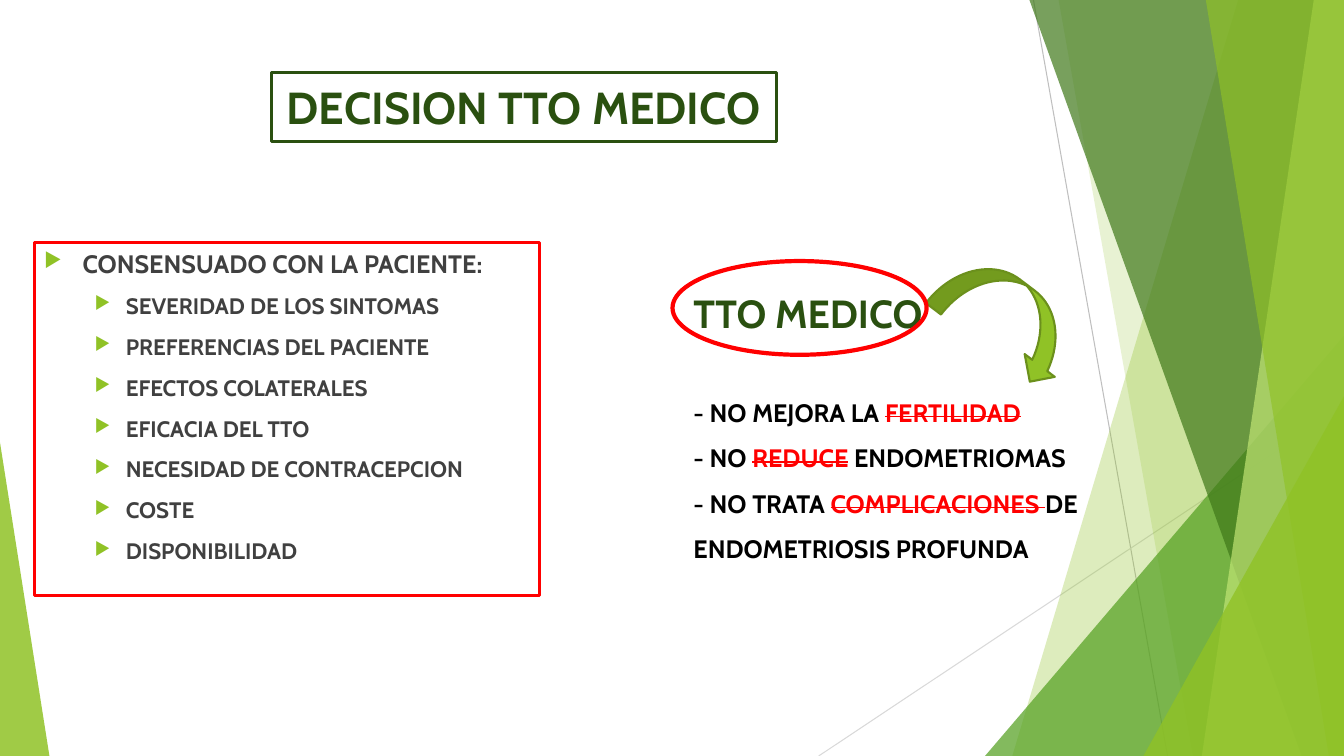
from dataclasses import dataclass

from lxml import etree
from pptx import Presentation, util as u
from pptx.dml.color import RGBColor
from pptx.enum import shapes, text
from pptx.oxml import ns


@dataclass(frozen=True)
class Theme:
    """Colours, font and type sizes of the slide."""
    font: str = "Cabin"
    lime: str = "90C226"
    leaf: str = "54A021"
    forest: str = "3F7819"
    pale: str = "C0E474"
    olive: str = "6B901C"
    dark: str = "2A5010"
    red: str = "FF0000"
    gray: str = "404040"
    black: str = "000000"
    ray: str = "BFBFBF"
    soft_ray: str = "D9D9D9"
    title: int = 32
    heading: int = 28
    body: int = 18
    item: int = 16


THEME = Theme()
SHAPE = shapes.MSO_SHAPE
WIDTH, HEIGHT = 13.33, 7.5

RAYS = [
    ((10.25, 0), (11.58, HEIGHT), THEME.ray),
    ((WIDTH, 4.03), (8.12, HEIGHT), THEME.soft_ray),
]
BACK_BANDS = [(12.28, 10.04, THEME.lime, 30), (10.5, 11.83, THEME.lime, 20)]
FRONT_BANDS = [
    (10.21, 12.91, THEME.forest, 70),
    (13.03, 11.92, THEME.pale, 70),
    (11.96, 13.18, THEME.lime, 65),
]
CRITERIA = [
    "SEVERIDAD DE LOS SINTOMAS",
    "PREFERENCIAS DEL PACIENTE",
    "EFECTOS COLATERALES",
    "EFICACIA DEL TTO",
    "NECESIDAD DE CONTRACEPCION",
    "COSTE",
    "DISPONIBILIDAD",
]
LIMITS = [
    ("- NO MEJORA LA ", "FERTILIDAD", ""),
    ("- NO ", "REDUCE", " ENDOMETRIOMAS"),
    ("- NO TRATA ", "COMPLICACIONES ", "DE ENDOMETRIOSIS PROFUNDA"),
]


def set_all(target, values):
    """Set every attribute named in a dict of format values."""
    for name, value in values.items():
        setattr(target, name, value)


def paint(shape, fill=None, alpha=100, line=None, weight=1):
    """Give a shape its fill, opacity and outline, without shadow."""
    shape.shadow.inherit = False
    if fill:
        shape.fill.solid()
        shape.fill.fore_color.rgb = RGBColor.from_string(fill)
        if alpha < 100:
            color = shape.fill._xPr.find(".//" + ns.qn("a:srgbClr"))
            etree.SubElement(color, ns.qn("a:alpha"), val=str(alpha * 1000))
    else:
        shape.fill.background()
    if line:
        shape.line.color.rgb = RGBColor.from_string(line)
        shape.line.width = u.Pt(weight)
    else:
        shape.line.fill.background()


def add_preset(page, kind, bounds, adjust=None, turn=0, **look):
    """Add a preset shape with its look."""
    shape = page.shapes.add_shape(kind, *map(u.Inches, bounds))
    shape.rotation = turn
    if adjust is not None:
        shape.adjustments[0] = adjust
    paint(shape, **look)
    return shape


def add_ray(page, start, end, color):
    """Add a thin straight background line."""
    ray = page.shapes.add_connector(
        shapes.MSO_CONNECTOR.STRAIGHT, *map(u.Inches, start + end))
    ray.line.color.rgb = RGBColor.from_string(color)
    ray.line.width = u.Pt(0.75)
    etree.SubElement(ray._element.spPr, ns.qn("a:effectLst"))


def add_band(page, top, bottom, color, alpha):
    """Add a band from a slanted left side to the right slide edge."""
    corners = [(top, 0), (WIDTH, 0), (WIDTH, HEIGHT), (bottom, HEIGHT)]
    points = [tuple(map(u.Inches, corner)) for corner in corners]
    builder = page.shapes.build_freeform(*points[0], scale=1.0)
    builder.add_line_segments(points[1:], close=True)
    paint(builder.convert_to_shape(), fill=color, alpha=alpha)


def add_span(para, words, size, color, strike=False):
    """Add a bold run, struck through if asked."""
    span = para.add_run()
    span.text = words
    set_all(span.font, {"name": THEME.font, "size": u.Pt(size), "bold": True})
    span.font.color.rgb = RGBColor.from_string(color)
    if strike:
        span._r.get_or_add_rPr().set("strike", "sngStrike")


def next_para(frame, **values):
    """Return the empty first paragraph or a new one, formatted."""
    first = frame.paragraphs[0]
    para = frame.add_paragraph() if first.runs else first
    set_all(para, {"alignment": text.PP_ALIGN.LEFT, **values})
    return para


def add_bullet(frame, words, size, left, hang, level):
    """Add a paragraph with a lime triangle bullet."""
    para = next_para(frame, level=level, space_before=u.Pt(10))
    props = para._p.get_or_add_pPr()
    props.set("marL", str(u.Inches(left)))
    props.set("indent", str(-u.Inches(hang)))
    color = etree.SubElement(props, ns.qn("a:buClr"))
    etree.SubElement(color, ns.qn("a:srgbClr"), val=THEME.lime)
    etree.SubElement(props, ns.qn("a:buSzPct"), val="80000")
    etree.SubElement(props, ns.qn("a:buChar"), char="▶")
    add_span(para, words, size, THEME.gray)


def add_background(page):
    """Draw the rays, bands and triangles behind the content."""
    for ray in RAYS:
        add_ray(page, *ray)
    for band in BACK_BANDS:
        add_band(page, *band)
    add_preset(page, SHAPE.ISOSCELES_TRIANGLE, (9.77, 3.33, 3.56, 4.17), 1,
               fill=THEME.leaf, alpha=72)
    for band in FRONT_BANDS:
        add_band(page, *band)
    add_preset(page, SHAPE.ISOSCELES_TRIANGLE, (11.34, 3.93, 1.99, 3.57), 1,
               fill=THEME.lime, alpha=80)
    add_preset(page, SHAPE.ISOSCELES_TRIANGLE, (0, 4.39, 0.49, 3.11), 0,
               fill=THEME.lime, alpha=85)


def add_title(page):
    """Add the framed title."""
    box = add_preset(page, SHAPE.RECTANGLE, (2.69, 0.72, 5.01, 0.68),
                     line=THEME.dark, weight=2.25)
    box.text_frame.vertical_anchor = text.MSO_ANCHOR.MIDDLE
    para = next_para(box.text_frame, alignment=text.PP_ALIGN.CENTER)
    add_span(para, "DECISION TTO MEDICO", THEME.title, THEME.dark)


def add_criteria(page):
    """Add the red framed list agreed with the patient."""
    box = add_preset(page, SHAPE.RECTANGLE, (0.34, 2.41, 5.01, 3.5),
                     line=THEME.red, weight=2.25)
    frame = box.text_frame
    set_all(frame, {"word_wrap": True, "vertical_anchor": text.MSO_ANCHOR.TOP})
    add_bullet(frame, "CONSENSUADO CON LA PACIENTE:", THEME.body, 0.38, 0.38, 0)
    for words in CRITERIA:
        add_bullet(frame, words, THEME.item, 0.81, 0.31, 1)


def add_limits(page):
    """Add the limits of medical treatment with their ellipse and arrow."""
    box = page.shapes.add_textbox(*map(u.Inches, (6.78, 2.59, 4.44, 3.02)))
    frame = box.text_frame
    frame.word_wrap = True
    heading = next_para(frame, line_spacing=1.5, space_after=u.Pt(32.5))
    add_span(heading, "TTO MEDICO", THEME.heading, THEME.dark)
    for before, struck, after in LIMITS:
        para = next_para(frame, line_spacing=1.5)
        add_span(para, before, THEME.body, THEME.black)
        add_span(para, struck, THEME.body, THEME.red, strike=True)
        if after:
            add_span(para, after, THEME.body, THEME.black)
    add_preset(page, SHAPE.CURVED_DOWN_ARROW, (9.26, 2.78, 1.48, 0.75),
               turn=37.1, fill=THEME.lime, line=THEME.olive, weight=1.5)
    add_preset(page, SHAPE.OVAL, (6.67, 2.59, 2.52, 0.93),
               line=THEME.red, weight=3)


def main():
    """Build the slide and save it."""
    deck = Presentation()
    set_all(deck, {"slide_width": u.Inches(WIDTH), "slide_height": u.Inches(HEIGHT)})
    page = deck.slides.add_slide(deck.slide_layouts[6])
    for draw in (add_background, add_title, add_criteria, add_limits):
        draw(page)
    deck.save("out.pptx")


if __name__ == "__main__":
    main()
